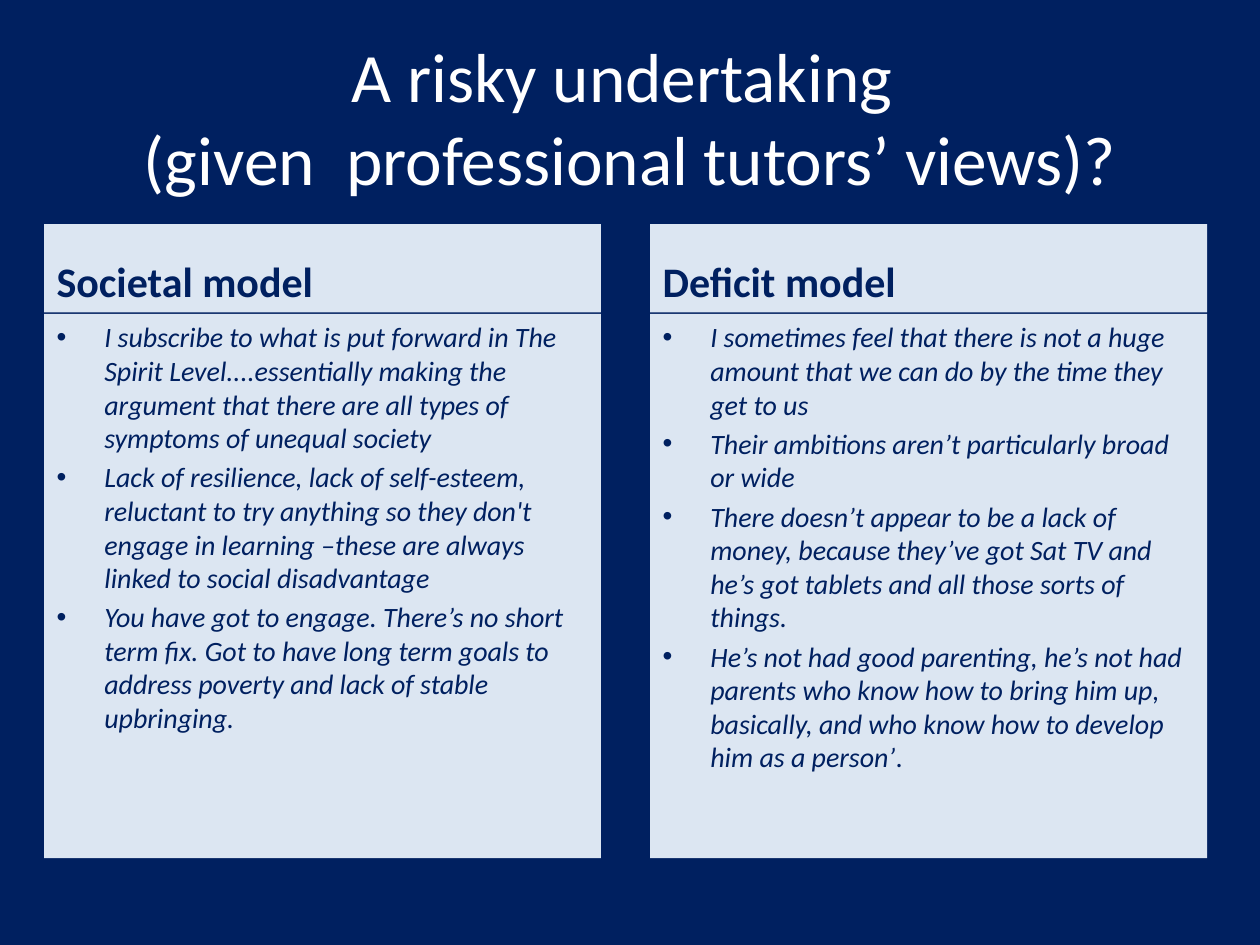
from dataclasses import dataclass

from lxml import etree
from pptx import Presentation
from pptx.dml.color import RGBColor
from pptx.enum.shapes import MSO_SHAPE
from pptx.enum.text import MSO_ANCHOR, MSO_AUTO_SIZE, PP_ALIGN
from pptx.oxml.ns import qn
from pptx.util import Inches, Pt

RECTANGLE = MSO_SHAPE.RECTANGLE
TOP, MIDDLE, BOTTOM = MSO_ANCHOR.TOP, MSO_ANCHOR.MIDDLE, MSO_ANCHOR.BOTTOM
LEFT, CENTER = PP_ALIGN.LEFT, PP_ALIGN.CENTER
TITLE_ONLY = 5
COLUMNS, ROWS = 100, 75


@dataclass(frozen=True)
class Theme:
    font: str = "Calibri"
    navy: str = "002060"
    panel: str = "DCE6F2"
    white: str = "FFFFFF"
    title_size: float = 39.6
    heading_size: float = 24
    quote_size: float = 16
    space_before: float = 0.2  # share of the type size
    indent: float = 0.38  # inches


THEME = Theme()

# Wording: a quote is a list of (text, italic) runs
TITLE = "A risky undertaking \v(given  professional tutors’ views)?"
MODELS = [
    ("Societal model", [
        [("I subscribe to what is put forward in The Spirit Level....essentially "
          "making the argument that there are all types of symptoms of unequal society", True)],
        [("Lack of resilience, lack of self-esteem, reluctant to try anything so they "
          "don't engage in learning –these are always linked to social disadvantage", True)],
        [("You have got to engage. There’s no short term fix. Got to have long term "
          "goals to address poverty and lack of stable upbringing.", True)],
    ]),
    ("Deficit model", [
        [("I sometimes feel that there is not a huge amount that we can do by the time "
          "they get to us", True)],
        [("Their ambitions aren’t particularly broad or wide", True)],
        [("There doesn’t appear to be a lack of money, because they’ve got Sat TV and "
          "he’s got tablets and all those sorts of things.", True)],
        [("He’s not had good parenting, he’s not had parents who know how to bring him "
          "up, basically, and who know how to develop him as a person’", True), (".", False)],
    ]),
]


def write(paragraph, text, size, color, bold=False, italic=False, align=LEFT):
    """Add formatted text to a paragraph; a vertical tab breaks the line."""
    paragraph.alignment = align
    for index, line in enumerate(text.split("\v")):
        if index:
            paragraph.add_line_break()
        run = paragraph.add_run()
        run.text = line
        font = run.font
        font.name, font.size = THEME.font, Pt(size)
        font.bold, font.italic = bold, italic
        font.color.rgb = RGBColor.from_string(color)


class SlideBuilder:
    def __init__(self, deck, theme):
        self.theme = theme
        self.column = deck.slide_width / COLUMNS
        self.row = deck.slide_height / ROWS
        self.slide = deck.slides.add_slide(deck.slide_layouts[TITLE_ONLY])
        background = self.slide.background.fill
        background.solid()
        background.fore_color.rgb = RGBColor.from_string(theme.navy)

    def box(self, left, top, width, height):
        """Turn grid columns and rows into slide lengths."""
        return (round(left * self.column), round(top * self.row),
                round(width * self.column), round(height * self.row))

    def title(self, text, *place):
        title = self.slide.shapes.title
        title.left, title.top, title.width, title.height = self.box(*place)
        frame = title.text_frame
        frame.auto_size = MSO_AUTO_SIZE.NONE
        frame.vertical_anchor = MIDDLE
        write(frame.paragraphs[0], text, self.theme.title_size, self.theme.white, align=CENTER)

    def panel(self, *place, anchor):
        panel = self.slide.shapes.add_shape(RECTANGLE, *self.box(*place))
        panel.shadow.inherit = False
        panel.fill.solid()
        panel.fill.fore_color.rgb = RGBColor.from_string(self.theme.panel)
        panel.line.fill.background()
        frame = panel.text_frame
        frame.word_wrap = True
        frame.vertical_anchor = anchor
        return frame

    def space(self, paragraph, size):
        paragraph.space_before = Pt(size * self.theme.space_before)

    def heading(self, text, *place):
        paragraph = self.panel(*place, anchor=BOTTOM).paragraphs[0]
        size = self.theme.heading_size
        self.space(paragraph, size)
        write(paragraph, text, size, self.theme.navy, bold=True)

    def quotes(self, quotes, *place):
        frame = self.panel(*place, anchor=TOP)
        size = self.theme.quote_size
        for index, runs in enumerate(quotes):
            paragraph = frame.add_paragraph() if index else frame.paragraphs[0]
            self.space(paragraph, size)
            for text, italic in runs:
                write(paragraph, text, size, self.theme.navy, italic=italic)
            self.bullet(paragraph)

    def bullet(self, paragraph):
        indent = Inches(self.theme.indent)
        properties = paragraph._p.get_or_add_pPr()
        properties.set("marL", str(indent))
        properties.set("indent", str(-indent))
        etree.SubElement(properties, qn("a:buFont"), typeface="Arial")
        etree.SubElement(properties, qn("a:buChar"), char="•")


def main():
    deck = Presentation()
    deck.slide_width, deck.slide_height = Inches(10), Inches(7.5)
    slide = SlideBuilder(deck, THEME)

    slide.title(TITLE, 5, 3, 90, 12.5)

    # One heading and one list of quotes per model, side by side
    first_left, step, width = 3.5, 48.1, 44.2
    for index, (name, quotes) in enumerate(MODELS):
        left = first_left + index * step
        slide.heading(name, left, 17.8, width, 7)
        slide.quotes(quotes, left, 24.9, width, 43.2)

    deck.save("out.pptx")


if __name__ == "__main__":
    main()
